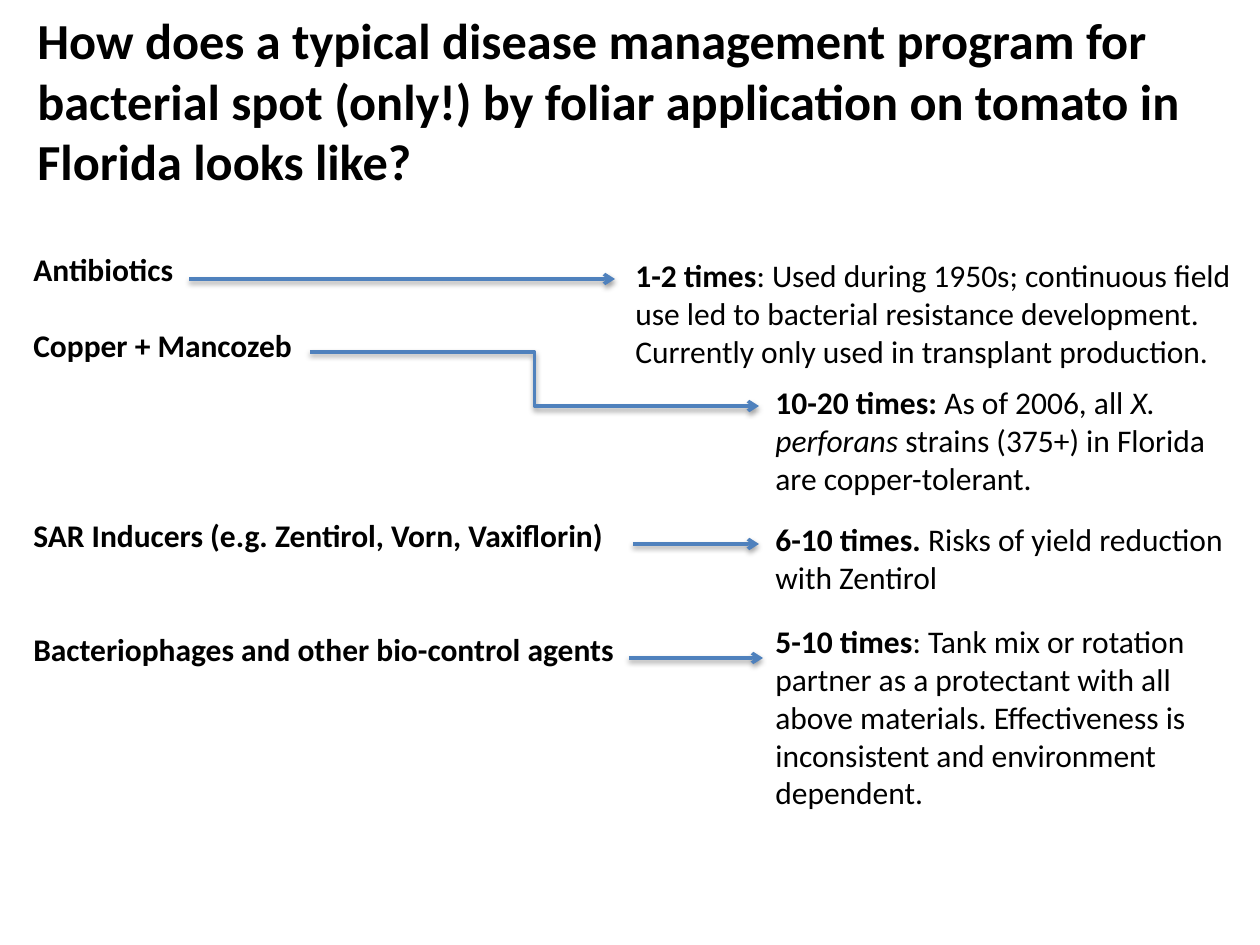
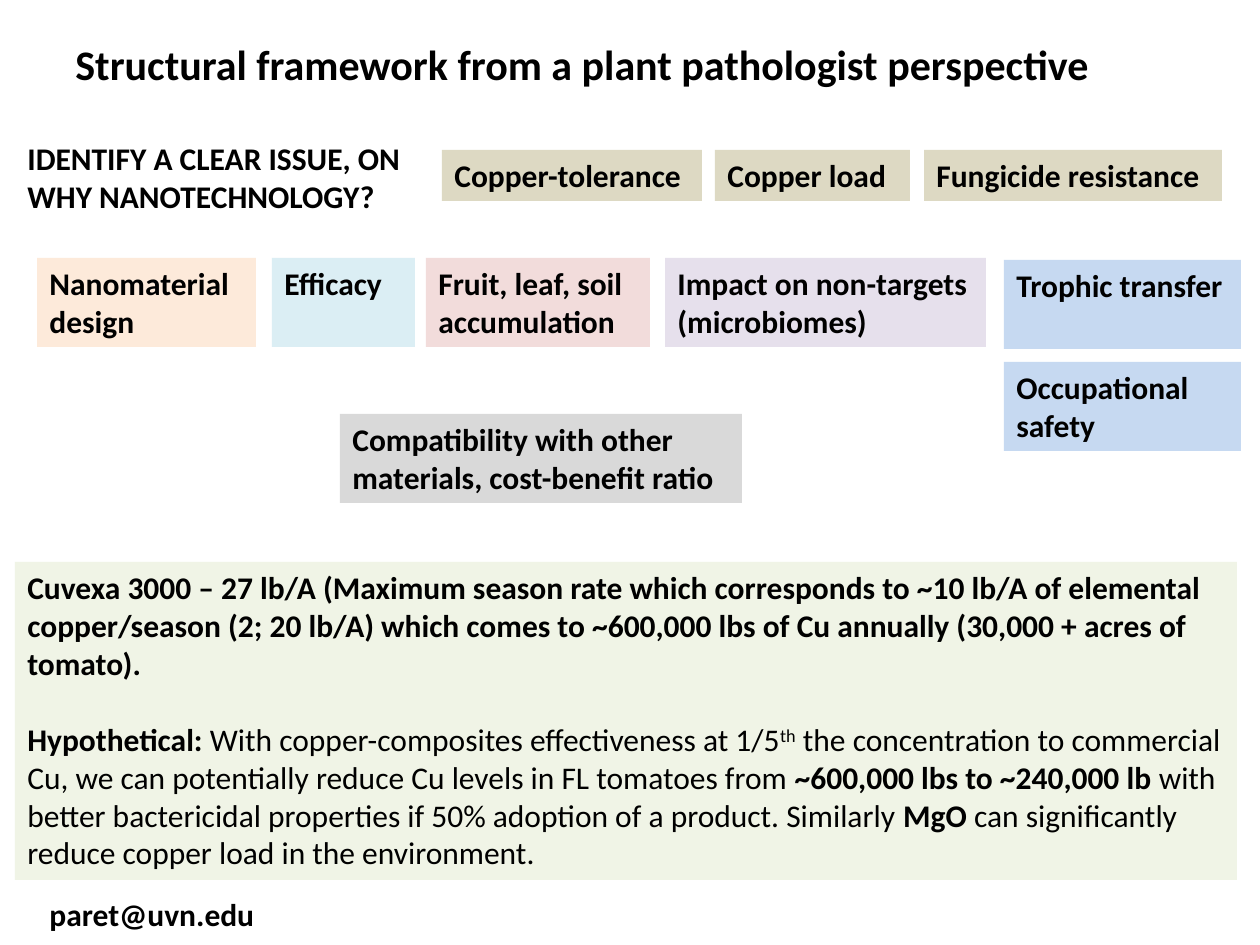
from lxml import etree
from pptx import Presentation, util as u
from pptx.dml.color import RGBColor
from pptx.enum import shapes, text
from pptx.oxml import parse_xml
from pptx.oxml.ns import qn

PX = u.Inches(1) / 126
FONT = "Calibri"
BODY = 18
COLORS = {
    "ink": "000000", "arrow": "4F81BD", "issue": "DDD9C3", "design": "FDEADA",
    "efficacy": "DBEEF4", "accumulation": "F2DCDB", "microbiome": "E6E0EC",
    "safety": "C6D9F1", "cost": "D9D9D9", "rate": "EBF1DE",
}
SHADOW = (
    '<a:effectLst xmlns:a="http://schemas.openxmlformats.org/drawingml/2006/main">'
    '<a:outerShdw blurRad="40000" dist="20000" dir="5400000" rotWithShape="0">'
    '<a:srgbClr val="000000"><a:alpha val="38000"/></a:srgbClr>'
    '</a:outerShdw></a:effectLst>'
)

PROGRAM_TITLE = ("How does a typical disease management program for bacterial spot "
                 "(only!) by foliar application on tomato in Florida looks like?")
LABEL_LEFT, LABEL_TOP, LABEL_WIDTH, LABEL_HEIGHT, LINE_PITCH = 21, 244, 631, 50, 38
TREATMENTS = [
    {"label": "Antibiotics", "line": 0,
     "arrow": (189, 279, 615, 279), "box": (623, 250, 629, 127),
     "notes": [("1-2 times", "b"),
               (": Used during 1950s; continuous field use led to bacterial resistance "
                "development. Currently only used in transplant production.", "")]},
    {"label": "Copper + Mancozeb", "line": 2,
     "arrow": (310, 352, 759, 406), "box": (763, 377, 475, 127),
     "notes": [("10-20 times: ", "b"), ("As of 2006, all ", ""), ("X. perforans ", "i"),
               ("strains (375+) in Florida are copper-tolerant.", "")]},
    {"label": "SAR Inducers (e.g. Zentirol, Vorn, Vaxiflorin)", "line": 7,
     "arrow": (633, 544, 759, 544), "box": (763, 514, 489, 89),
     "notes": [("6-10 times. ", "b"), ("Risks of yield reduction with Zentirol", "")]},
    {"label": "Bacteriophages and other bio-control agents", "line": 10,
     "arrow": (629, 658, 763, 658), "box": (763, 616, 467, 204),
     "notes": [("5-10 times", "b"),
               (": Tank mix or rotation partner as a protectant with all above materials. "
                "Effectiveness is inconsistent and environment dependent.", "")]},
]

FRAMEWORK_TITLE = "Structural framework from a plant pathologist perspective"
QUESTION = "IDENTIFY A CLEAR ISSUE, ON WHY NANOTECHNOLOGY?"
CONTACT = "paret@uvn.edu"
ISSUE_TOP, ISSUE_HEIGHT, TOPIC_TOP, TOPIC_HEIGHT = 150, 51, 258, 89
ISSUES = [("Copper-tolerance", 442, 260), ("Copper load", 715, 195),
          ("Fungicide resistance", 924, 298)]
TOPICS = [
    ("Nanomaterial design", "design", 37, 0, 219),
    ("Efficacy", "efficacy", 272, 0, 143),
    ("Fruit, leaf, soil accumulation", "accumulation", 426, 0, 224),
    ("Impact on non-targets (microbiomes)", "microbiome", 665, 0, 321),
    ("Trophic transfer", "safety", 1004, 2, 237),
    ("Occupational safety", "safety", 1004, 104, 237),
    ("Compatibility with other materials, cost-benefit ratio", "cost", 340, 156, 402),
]
RATE = [
    [("Cuvexa 3000 – 27 lb/A (Maximum season rate which corresponds to ~10 lb/A of "
      "elemental copper/season (2; 20 lb/A) which comes to ~600,000 lbs of Cu annually "
      "(30,000 + acres of tomato).", "b")],
    [("Hypothetical: ", "b"), ("With copper-composites effectiveness at 1/5", ""),
     ("th", "^"),
     (" the concentration to commercial Cu, we can potentially reduce Cu levels in FL "
      "tomatoes from ", ""),
     ("~600,000 lbs to ~240,000 lb ", "b"),
     ("with better bactericidal properties if 50% adoption of a product. Similarly ", ""),
     ("MgO", "b"), (" can significantly reduce copper load in the environment.", "")],
]


def px(*lengths):
    return [u.Emu(round(length * PX)) for length in lengths]


def rgb(name):
    return RGBColor.from_string(COLORS[name])


def write(slide, content, box, size=BODY, fill=None, opacity=None,
          anchor=text.MSO_ANCHOR.TOP, gap=0):
    paragraphs = [[(content, "b")]] if isinstance(content, str) else content
    if fill:
        holder = slide.shapes.add_shape(shapes.MSO_SHAPE.RECTANGLE, *px(*box))
        holder.shadow.inherit = False
        holder.fill.solid()
        holder.fill.fore_color.rgb = rgb(fill)
        holder.line.fill.background()
        if opacity:
            color = holder.fill._xPr.find(qn("a:solidFill"))[0]
            etree.SubElement(color, qn("a:alpha")).set("val", str(opacity * 1000))
    else:
        holder = slide.shapes.add_textbox(*px(*box))
    frame = holder.text_frame
    frame.word_wrap = True
    frame.vertical_anchor = anchor
    for index, runs in enumerate(paragraphs):
        paragraph = frame.add_paragraph() if index else frame.paragraphs[0]
        paragraph.alignment = text.PP_ALIGN.LEFT
        if index:
            paragraph.space_before = u.Pt(gap)
        for words, style in runs:
            run = paragraph.add_run()
            run.text = words
            run.font.name = FONT
            run.font.size = u.Pt(size)
            run.font.color.rgb = rgb("ink")
            run.font.bold = "b" in style
            run.font.italic = "i" in style
            if "^" in style:
                run._r.get_or_add_rPr().set("baseline", "30000")


def arrow(slide, ends):
    straight = ends[1] == ends[3]
    kind = shapes.MSO_CONNECTOR.STRAIGHT if straight else shapes.MSO_CONNECTOR.ELBOW
    link = slide.shapes.add_connector(kind, *px(*ends))
    link.line.color.rgb = rgb("arrow")
    link.line.width = u.Pt(2)
    properties = link._element.spPr
    etree.SubElement(properties.find(qn("a:ln")), qn("a:tailEnd")).set("type", "arrow")
    properties.append(parse_xml(SHADOW))


def build_program(slide):
    write(slide, PROGRAM_TITLE, (25, 24, 1211, 152), size=28.8,
          anchor=text.MSO_ANCHOR.MIDDLE)
    for treatment in TREATMENTS:
        top = LABEL_TOP + treatment["line"] * LINE_PITCH
        write(slide, treatment["label"], (LABEL_LEFT, top, LABEL_WIDTH, LABEL_HEIGHT))
        arrow(slide, treatment["arrow"])
        write(slide, [treatment["notes"]], treatment["box"])


def build_framework(slide):
    write(slide, FRAMEWORK_TITLE, (63, 32, 1055, 63), size=24)
    write(slide, QUESTION, (15, 133, 411, 89))
    for issue, left, width in ISSUES:
        write(slide, issue, (left, ISSUE_TOP, width, ISSUE_HEIGHT), fill="issue")
    for topic, fill, left, drop, width in TOPICS:
        write(slide, topic, (left, TOPIC_TOP + drop, width, TOPIC_HEIGHT), fill=fill)
    write(slide, RATE, (15, 562, 1222, 318), fill="rate", opacity=73, gap=22)
    write(slide, CONTACT, (37, 889, 260, 50))


def main():
    deck = Presentation()
    deck.slide_width, deck.slide_height = px(1260, 945)
    for build in (build_program, build_framework):
        build(deck.slides.add_slide(deck.slide_layouts[6]))
    deck.save("out.pptx")


if __name__ == "__main__":
    main()
